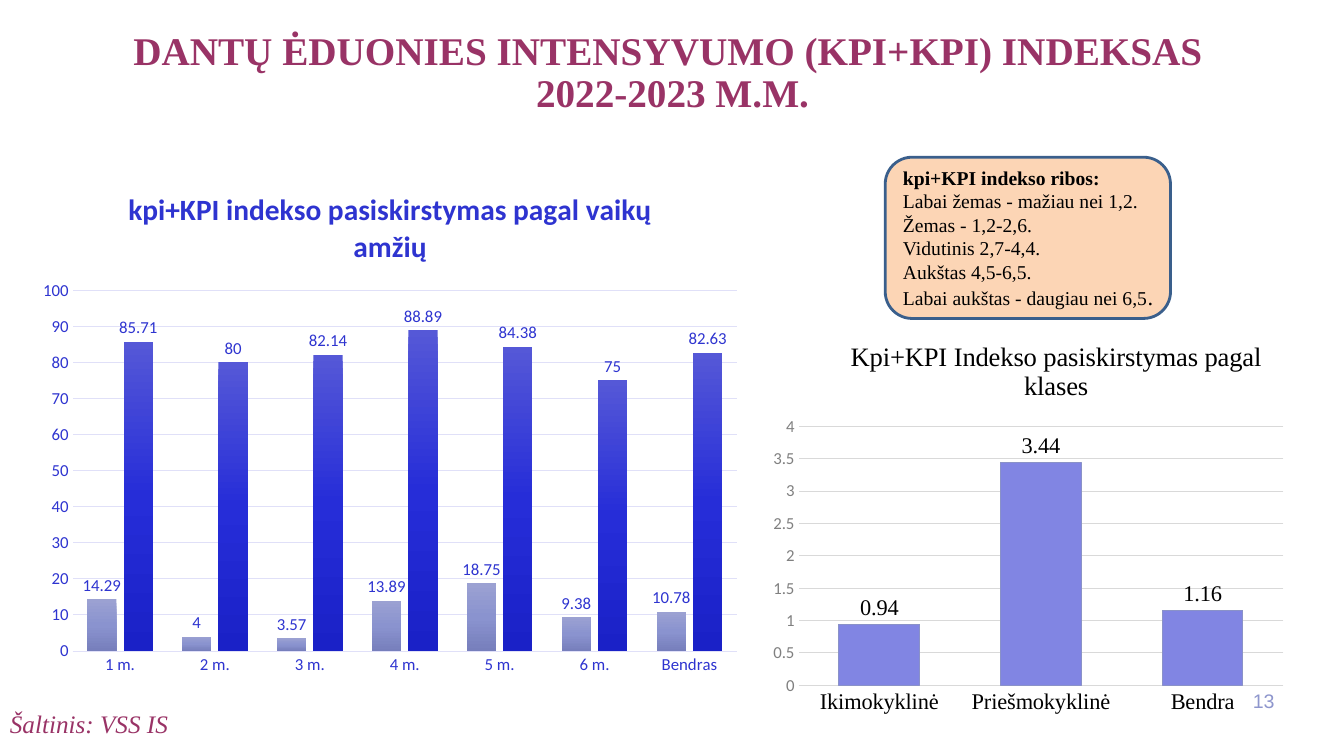
from lxml import etree
from pptx import Presentation
from pptx import util as u
from pptx.chart.data import CategoryChartData
from pptx.dml.color import RGBColor
from pptx.enum import chart as charts, shapes, text
from pptx.oxml import parse_xml
from pptx.oxml.ns import nsdecls, qn

# Content
HEADING = ["DANTŲ ĖDUONIES INTENSYVUMO (KPI+KPI) INDEKSAS ", "2022-2023 M.M."]
SOURCE = "Šaltinis: VSS IS"
PAGE_NUMBER = "13"
LIMITS = [
    "kpi+KPI indekso ribos:",
    "Labai žemas - mažiau nei 1,2.",
    "Žemas - 1,2-2,6.",
    "Vidutinis 2,7-4,4.",
    "Aukštas 4,5-6,5.",
    "Labai aukštas - daugiau nei 6,5",
]
THEME = {
    "serif": "Times New Roman", "sans": "Calibri", "number": "Arial",
    "plum": "993366", "black": "000000", "blue": "2E34D0", "grey": "808080",
    "periwinkle": "8E96CD", "peach": "FCD5B5", "steel": "3A5F8C",
    "heading": 28, "source": 18, "page": 14, "limits": 14, "limits_end": 16,
    "axis": 12, "classes": 16, "age_title": 21, "class_title": 19,
}
AGE_CHART = {
    "at": (0.28, 1.7, 7.18, 5.09),
    "plot": (0.72, 2.88, 6.59, 3.58),
    "title": "kpi+KPI indekso pasiskirstymas pagal vaikų amžių",
    "title_at": (1.22, 1.82),
    "title_style": (THEME["sans"], THEME["age_title"], THEME["blue"], True),
    "cats": ["1 m.", "2 m.", "3 m.", "4 m.", "5 m.", "6 m.", "Bendras"],
    "series": [
        ("Series 1", [14.29, 4, 3.57, 13.89, 18.75, 9.38, 10.78],
         ["9BA1D2", "8A93CF", "777FBC"]),
        ("Series 2", [85.71, 80, 82.14, 88.89, 84.38, 75, 82.63],
         ["5558D7", "262DD8", "1A21C7"]),
    ],
    "scale": (100, 10),
    "grid": "E0E0F8",
    "outline": None,
    "value_style": (THEME["sans"], THEME["axis"], THEME["blue"]),
    "label_style": (THEME["sans"], THEME["axis"], THEME["blue"]),
}
CLASS_CHART = {
    "at": (7.56, 3.2, 5.28, 3.97),
    "plot": (7.92, 4.23, 4.81, 2.57),
    "title": "Kpi+KPI Indekso pasiskirstymas pagal klases",
    "title_at": (8.39, 3.33),
    "title_style": (THEME["serif"], THEME["class_title"], THEME["black"], False),
    "cats": ["Ikimokyklinė", "Priešmokyklinė", "Bendra"],
    "series": [("Series 1", [0.94, 3.44, 1.16], ["8185E3"])],
    "scale": (4, 0.5),
    "grid": "D9D9D9",
    "outline": "8A92C8",
    "value_style": (THEME["sans"], THEME["axis"], THEME["grey"]),
    "label_style": (THEME["serif"], THEME["classes"], THEME["black"]),
}


def style(font, name, size, color, bold=False, italic=False):
    font.name, font.size = name, u.Pt(size)
    font.bold, font.italic = bold, italic
    font.color.rgb = RGBColor.from_string(color)


def add_span(para, words, *look, **extra):
    span = para.add_run()
    span.text = words
    style(span.font, *look, **extra)


def add_text(page, at, lines, look, align, **extra):
    box = page.shapes.add_textbox(*map(u.Inches, at))
    box.text_frame.word_wrap = True
    para = box.text_frame.paragraphs[0]
    para.alignment = align
    for index, line in enumerate(lines):
        if index:
            para.add_line_break()
        add_span(para, line, *look, **extra)
    return box


def set_line(line, color, width=0.75):
    line.color.rgb = RGBColor.from_string(color)
    line.width = u.Pt(width)


def layout_xml(frame, left, top, size=None):
    """Place a chart part, given in slide inches, as shares of its frame."""
    x, y, width, height = frame
    shares = {"x": (left - x) / width, "y": (top - y) / height}
    if size:
        shares.update(w=size[0] / width, h=size[1] / height)
    target = '<c:layoutTarget val="inner"/>' if size else ""
    modes = "".join(f'<c:{key}Mode val="edge"/>' for key in "xy")
    values = "".join(f'<c:{key} val="{share:.4f}"/>' for key, share in shares.items())
    return parse_xml(f'<c:layout {nsdecls("c")}><c:manualLayout>{target}{modes}{values}'
                     "</c:manualLayout></c:layout>")


def fill_bars(series, colors):
    if len(colors) == 1:
        series.format.fill.solid()
        series.format.fill.fore_color.rgb = RGBColor.from_string(colors[0])
        return
    series.format.fill.gradient()
    series.format.fill.gradient_angle = 270
    stops = series.format.fill._fill._gradFill.find(qn("a:gsLst"))
    for old in list(stops):
        stops.remove(old)
    for index, color in enumerate(colors):
        stop = etree.SubElement(stops, qn("a:gs"),
                                pos=str(index * 100000 // (len(colors) - 1)))
        etree.SubElement(stop, qn("a:srgbClr"), val=color)


def add_columns(page, info):
    data = CategoryChartData()
    data.categories = info["cats"]
    for name, values, _ in info["series"]:
        data.add_series(name, values)
    chart = page.shapes.add_chart(charts.XL_CHART_TYPE.COLUMN_CLUSTERED,
                                  *map(u.Inches, info["at"]), data).chart
    style(chart.font, THEME["sans"], 10, THEME["black"])
    chart.has_legend = False

    # Chart title
    frame = chart.chart_title.text_frame
    add_span(frame.paragraphs[0], info["title"], *info["title_style"])
    title = chart.chart_title._element
    for old in title.findall(qn("c:layout")):
        title.remove(old)
    title.find(qn("c:tx")).addnext(layout_xml(info["at"], *info["title_at"]))
    chart.chart_title.include_in_layout = False

    # Plot area and axes
    area = chart._chartSpace.chart.plotArea
    for old in area.findall(qn("c:layout")):
        area.remove(old)
    left, top, *extent = info["plot"]
    area.insert(0, layout_xml(info["at"], left, top, extent))
    category, value = chart.category_axis, chart.value_axis
    for axis, look in ((category, info["label_style"]), (value, info["value_style"])):
        axis.major_tick_mark = axis.minor_tick_mark = charts.XL_TICK_MARK.NONE
        style(axis.tick_labels.font, *look)
    set_line(category.format.line, info["grid"])
    value.format.line.fill.background()
    value.has_major_gridlines = True
    set_line(value.major_gridlines.format.line, info["grid"])
    value.minimum_scale = 0
    value.maximum_scale, value.major_unit = info["scale"]
    value.tick_labels.number_format = "General"
    value.tick_labels.number_format_is_linked = False

    # Bars and their labels
    plot = chart.plots[0]
    plot.gap_width, plot.overlap, plot.vary_by_categories = 100, -24, False
    for series, (_, _, colors) in zip(plot.series, info["series"]):
        fill_bars(series, colors)
        if info["outline"]:
            set_line(series.format.line, info["outline"])
        labels = series.data_labels
        labels.show_value = True
        labels.position = charts.XL_LABEL_POSITION.OUTSIDE_END
        style(labels.font, *info["label_style"])


deck = Presentation()
deck.slide_width, deck.slide_height = u.Inches(13.33), u.Inches(7.5)
page = deck.slides.add_slide(deck.slide_layouts[6])

# Heading, source and page number
heading = add_text(page, (0.21, 0.58, 12.92, 0.62), HEADING,
                   (THEME["serif"], THEME["heading"], THEME["plum"]),
                   text.PP_ALIGN.CENTER, bold=True)
heading.text_frame.vertical_anchor = text.MSO_ANCHOR.BOTTOM
heading.text_frame.paragraphs[0].line_spacing = 0.9
add_text(page, (0, 6.98, 6.3, 0.38), [SOURCE],
         (THEME["serif"], THEME["source"], THEME["plum"]),
         text.PP_ALIGN.LEFT, italic=True)
add_text(page, (12.22, 6.79, 0.52, 0.4), [PAGE_NUMBER],
         (THEME["number"], THEME["page"], THEME["periwinkle"]), text.PP_ALIGN.RIGHT)

# Index limits
limits = page.shapes.add_shape(shapes.MSO_SHAPE.ROUNDED_RECTANGLE,
                               *map(u.Inches, (8.78, 1.56, 2.83, 1.6)))
limits.shadow.inherit = False
limits.fill.solid()
limits.fill.fore_color.rgb = RGBColor.from_string(THEME["peach"])
set_line(limits.line, THEME["steel"], 2)
frame = limits.text_frame
frame.word_wrap = True
frame.margin_right = 0
frame.vertical_anchor = text.MSO_ANCHOR.MIDDLE
for index, line in enumerate(LIMITS):
    para = frame.add_paragraph() if index else frame.paragraphs[0]
    para.alignment = text.PP_ALIGN.LEFT
    add_span(para, line, THEME["serif"], THEME["limits"], THEME["black"], bold=index == 0)
add_span(para, ".", THEME["serif"], THEME["limits_end"], THEME["black"])

# Charts
for info in (AGE_CHART, CLASS_CHART):
    add_columns(page, info)

deck.save("out.pptx")
